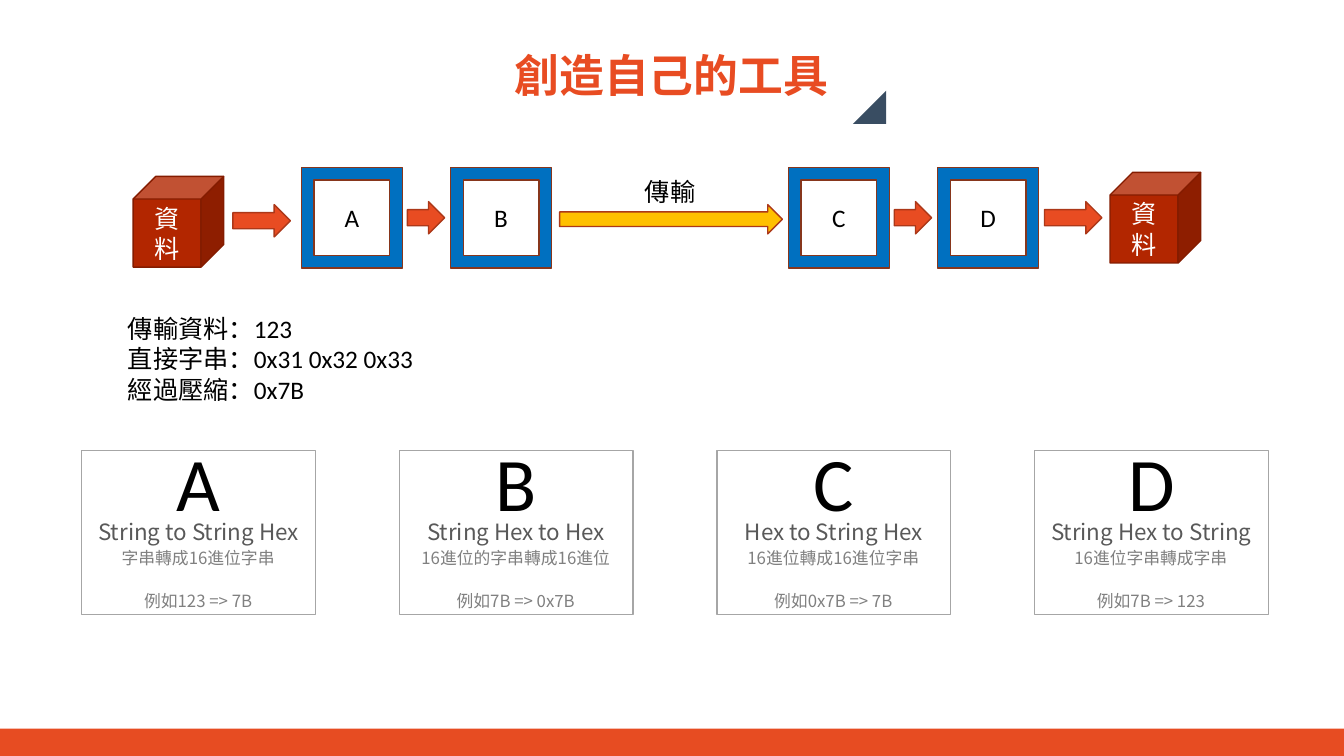
from pptx import Presentation
from pptx.dml.color import RGBColor
from pptx.enum.shapes import MSO_SHAPE
from pptx.enum.text import MSO_ANCHOR, PP_ALIGN
from pptx.util import Inches, Pt

ORANGE = RGBColor(0xE8, 0x4C, 0x22)
FOOTER_ORANGE = RGBColor(0xE7, 0x4C, 0x22)
ARROW_EDGE = RGBColor(0xAC, 0x38, 0x19)
AMBER = RGBColor(0xFF, 0xC0, 0x00)
NAVY = RGBColor(0x39, 0x4D, 0x62)
BLUE = RGBColor(0x00, 0x70, 0xC0)
FRAME_EDGE = RGBColor(0x87, 0x36, 0x1C)
BRICK = RGBColor(0xB2, 0x26, 0x00)
BRICK_EDGE = RGBColor(0x84, 0x1C, 0x00)
CARD_EDGE = RGBColor(0xA6, 0xA6, 0xA6)
DARK_GRAY = RGBColor(0x59, 0x59, 0x59)
GRAY = RGBColor(0x80, 0x80, 0x80)
BLACK = RGBColor(0, 0, 0)
WHITE = RGBColor(0xFF, 0xFF, 0xFF)

BODY_FONT = "Calibri"
CARD_FONT = "Noto Sans CJK SC"
COLUMNS, ROWS = 133.3, 75


class Board:
    def __init__(self, deck):
        self.slide = deck.slides.add_slide(deck.slide_layouts[6])
        self.column = deck.slide_width / COLUMNS
        self.row = deck.slide_height / ROWS

    def place(self, left, top, width, height):
        return (round(left * self.column), round(top * self.row),
                round(width * self.column), round(height * self.row))

    def fill_text(self, frame, lines, size, color, font=BODY_FONT, bold=False,
                  align=PP_ALIGN.CENTER, **paragraph_format):
        frame.word_wrap = True
        for index, line in enumerate(lines):
            paragraph = frame.paragraphs[0] if index == 0 else frame.add_paragraph()
            paragraph.text = line
            for name, value in {"alignment": align, **paragraph_format}.items():
                setattr(paragraph, name, value)
            for name, value in {"name": font, "size": Pt(size), "bold": bold}.items():
                setattr(paragraph.font, name, value)
            paragraph.font.color.rgb = color

    def text(self, box, lines, size, color, **style):
        label = self.slide.shapes.add_textbox(*self.place(*box))
        self.fill_text(label.text_frame, lines, size, color, **style)

    def shape(self, kind, box, fill, edge=None, caption=None, color=BLACK):
        figure = self.slide.shapes.add_shape(kind, *self.place(*box))
        figure.shadow.inherit = False
        figure.fill.solid()
        figure.fill.fore_color.rgb = fill
        if edge is None:
            figure.line.fill.background()
        else:
            figure.line.color.rgb = edge
            figure.line.width = Pt(1)
        if caption:
            figure.text_frame.vertical_anchor = MSO_ANCHOR.MIDDLE
            self.fill_text(figure.text_frame, [caption], 18, color)
        return figure

    def arrow(self, box, fill=ORANGE):
        self.shape(MSO_SHAPE.RIGHT_ARROW, box, fill, ARROW_EDGE)

    def cube(self, left, top):
        self.shape(MSO_SHAPE.CUBE, (left, top, 9, 9), BRICK, BRICK_EDGE, "資料", WHITE)

    def card(self, left, letter, conversion, meaning, example):
        self.shape(MSO_SHAPE.RECTANGLE, (left, 44.7, 23.2, 16.3), WHITE, CARD_EDGE)
        self.text((left + 0.5, 53.5, 22.1, 8.3), [meaning, example], 12, GRAY,
                  font=CARD_FONT, line_spacing=1.2, space_after=Pt(13.4))
        self.text((left - 1, 50.4, 25.2, 4.2), [conversion], 16, DARK_GRAY,
                  font=CARD_FONT, line_spacing=1.2)
        self.text((left + 8.3, 42.75, 6.6, 10.1), [letter], 54, BLACK)


def main():
    deck = Presentation()
    deck.slide_width, deck.slide_height = Inches(13.33), Inches(7.5)
    board = Board(deck)

    board.text((46.9, 4.2, 39.4, 6.4), ["創造自己的工具"], 32, ORANGE, bold=True)
    corner = board.shape(MSO_SHAPE.ISOSCELES_TRIANGLE, (84.6, 9, 3.3, 3.3), NAVY)
    corner.adjustments[0] = 1

    cards = [
        ("A", "String to String Hex", "字串轉成16進位字串", "例如123 => 7B"),
        ("B", "String Hex to Hex", "16進位的字串轉成16進位", "例如7B => 0x7B"),
        ("C", "Hex to String Hex", "16進位轉成16進位字串", "例如0x7B => 7B"),
        ("D", "String Hex to String", "16進位字串轉成字串", "例如7B => 123"),
    ]
    for index, card in enumerate(cards):
        board.card(8.1 + 31.5 * index, *card)
    board.shape(MSO_SHAPE.RECTANGLE, (0, 72.3, COLUMNS, 2.7), FOOTER_ORANGE)

    board.cube(13.2, 17.5)
    board.cube(110.1, 17.1)
    for pair_left, steps in ((29.9, "AB"), (78.2, "CD")):
        for index, step in enumerate(steps):
            board.shape(MSO_SHAPE.FRAME, (pair_left + 14.8 * index, 16.6, 10, 10),
                        BLUE, FRAME_EDGE, step)
        board.arrow((pair_left + 10.5, 20, 3.7, 3.2))
    board.arrow((23.1, 20.3, 5.7, 3.2))
    board.arrow((103.6, 20, 5.7, 3.2))
    board.arrow((55.5, 20.3, 22.1, 2.9), AMBER)
    board.text((62.9, 17, 7.1, 4), ["傳輸"], 18, BLACK)
    board.text((11.7, 30.6, 30.6, 10.1),
               ["傳輸資料：123", "直接字串：0x31 0x32 0x33", "經過壓縮：0x7B"],
               18, BLACK, align=PP_ALIGN.LEFT)

    deck.save("out.pptx")


if __name__ == "__main__":
    main()
